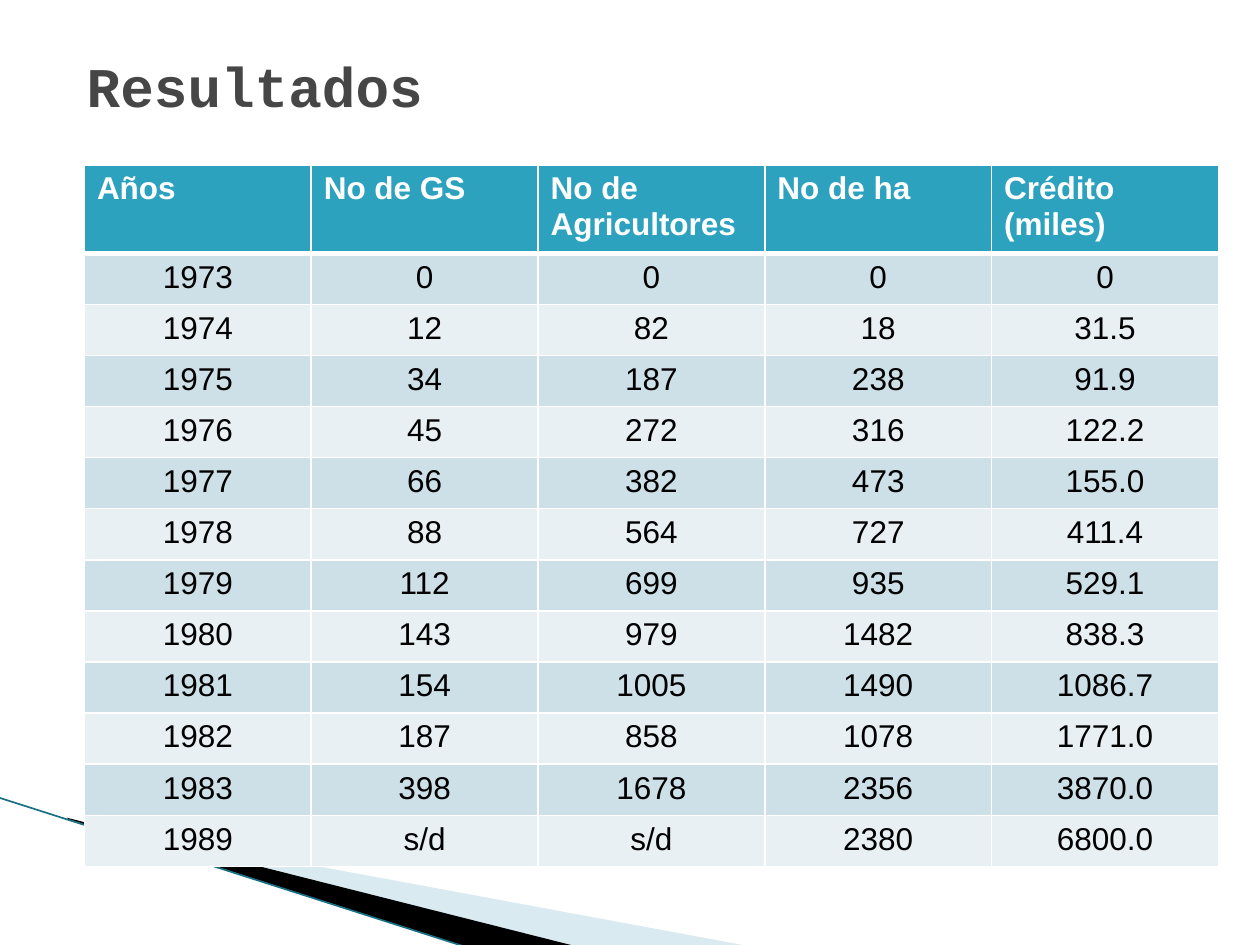
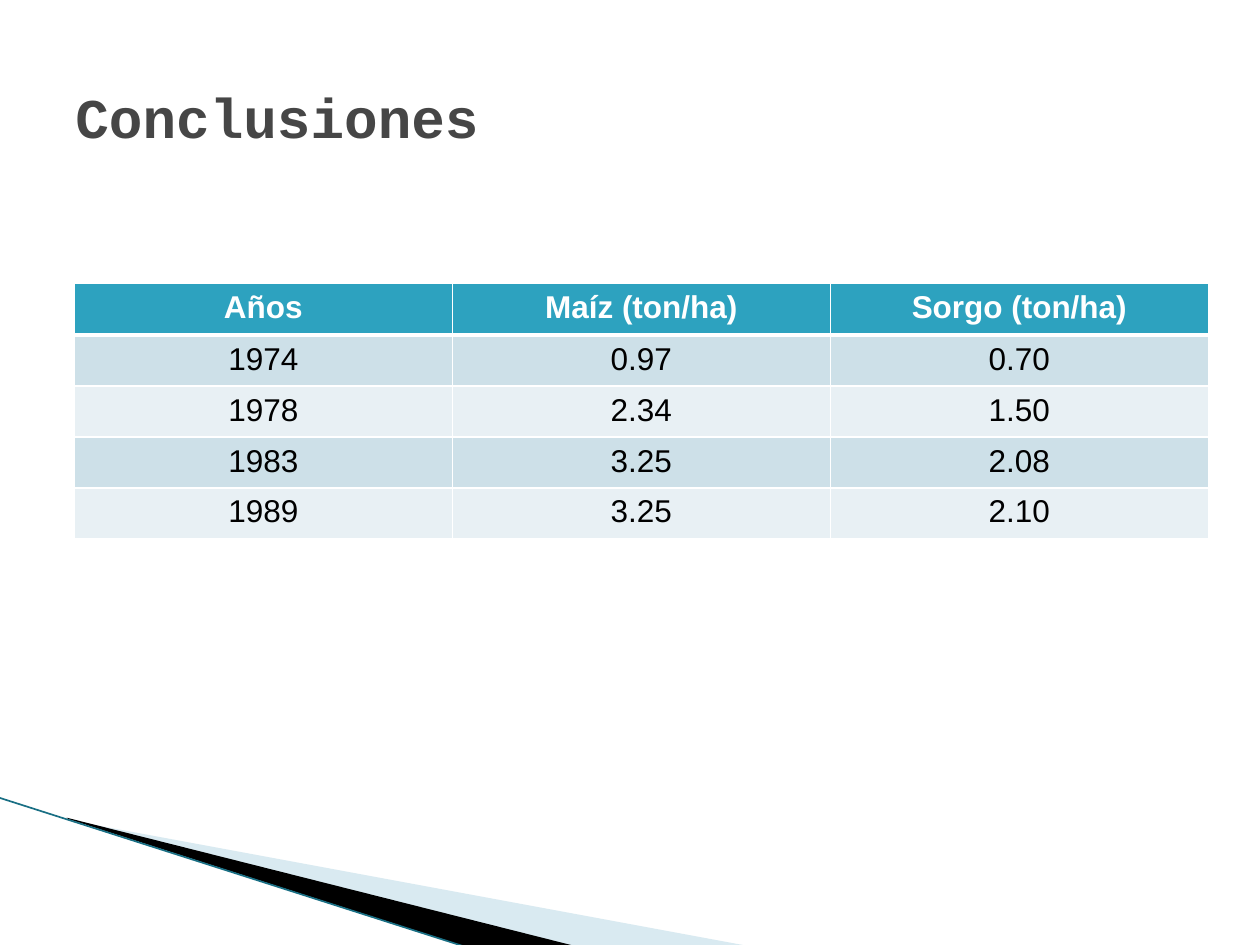
"""Builds two slides of results tables on a shared wedge design."""
from lxml import etree
from pptx import Presentation
from pptx.dml.color import RGBColor
from pptx.enum.text import MSO_ANCHOR, PP_ALIGN
from pptx.oxml import parse_xml
from pptx.oxml.ns import qn
from pptx.util import Pt

PX = 9144
NS = "http://schemas.openxmlformats.org/drawingml/2006/main"
COLORS = {
    "title": "464646", "header": "2DA2BF", "odd": "CDE0E8", "even": "E8F0F4",
    "white": "FFFFFF", "black": "000000", "pale": "A0CBDC", "edge": "196F84",
}
WEDGES = [
    ("pale", 40, [(55, 651), (595, 751), (456, 751), (55, 650)]),
    ("black", 100, [(53, 649), (457, 751), (372, 752), (54, 650)]),
]
EDGE = (-1, 633, 371, 752)
SLIDES = [
    {
        "title": "Resultados", "title_box": (59, 21, 900, 93),
        "table_box": (67, 131, 900, 557), "header_height": 70,
        "header_align": PP_ALIGN.LEFT,
        "rows": [
            ("Años", "No de GS", "No de Agricultores", "No de ha", "Crédito (miles)"),
            ("1973", "0", "0", "0", "0"),
            ("1974", "12", "82", "18", "31.5"),
            ("1975", "34", "187", "238", "91.9"),
            ("1976", "45", "272", "316", "122.2"),
            ("1977", "66", "382", "473", "155.0"),
            ("1978", "88", "564", "727", "411.4"),
            ("1979", "112", "699", "935", "529.1"),
            ("1980", "143", "979", "1482", "838.3"),
            ("1981", "154", "1005", "1490", "1086.7"),
            ("1982", "187", "858", "1078", "1771.0"),
            ("1983", "398", "1678", "2356", "3870.0"),
            ("1989", "s/d", "s/d", "2380", "6800.0"),
        ],
    },
    {
        "title": "Conclusiones", "title_box": (50, 30, 900, 125),
        "table_box": (59, 225, 900, 203), "header_height": 41,
        "header_align": PP_ALIGN.CENTER,
        "rows": [
            ("Años", "Maíz (ton/ha)", "Sorgo (ton/ha)"),
            ("1974", "0.97", "0.70"),
            ("1978", "2.34", "1.50"),
            ("1983", "3.25", "2.08"),
            ("1989", "3.25", "2.10"),
        ],
    },
]


def rgb(name):
    return RGBColor.from_string(COLORS[name])


def emu(values):
    return [round(v * PX) for v in values]


def write(tf, text, font="Arial", size=18, color="black", bold=False,
          align=PP_ALIGN.LEFT):
    p = tf.paragraphs[0]
    p.alignment = align
    r = p.add_run()
    r.text = text
    r.font.name, r.font.size, r.font.bold = font, Pt(size), bold
    r.font.color.rgb = rgb(color)


def add_wedges(s):
    for color, opacity, points in WEDGES:
        builder = s.shapes.build_freeform(*points[0], scale=PX)
        builder.add_line_segments(points[1:], close=True)
        sp = builder.convert_to_shape()
        sp.shadow.inherit = False
        sp.fill.solid()
        sp.fill.fore_color.rgb = rgb(color)
        sp.line.fill.background()
        if opacity < 100:
            clr = sp._element.spPr.find(qn("a:solidFill"))[0]
            etree.SubElement(clr, qn("a:alpha"), val=str(opacity * 1000))
    line = s.shapes.add_connector(1, *emu(EDGE))
    line.line.color.rgb = rgb("edge")
    line.line.width = Pt(0.95)
    etree.SubElement(line._element.spPr, qn("a:effectLst"))


def set_borders(cell, top, bottom):
    tc_pr = cell._tc.get_or_add_tcPr()
    widths = {"L": 1, "R": 1, "T": top, "B": bottom}
    for i, (side, width) in enumerate(widths.items()):
        tc_pr.insert(i, parse_xml(
            f'<a:ln{side} xmlns:a="{NS}" w="{Pt(width)}"><a:solidFill>'
            f'<a:srgbClr val="{COLORS["white"]}"/></a:solidFill></a:ln{side}>'))


def add_table(s, rows, box, header_height, header_align):
    n_rows, n_cols = len(rows), len(rows[0])
    table = s.shapes.add_table(n_rows, n_cols, *emu(box)).table
    body_height = (box[3] - header_height) / (n_rows - 1)
    for col in table.columns:
        col.width = round(box[2] * PX / n_cols)
    for i, values in enumerate(rows):
        header = i == 0
        table.rows[i].height = round((header_height if header else body_height) * PX)
        fill = "header" if header else "odd" if i % 2 else "even"
        for j, text in enumerate(values):
            cell = table.cell(i, j)
            cell.fill.solid()
            cell.fill.fore_color.rgb = rgb(fill)
            set_borders(cell, top=3 if i == 1 else 1, bottom=3 if header else 1)
            write(cell.text_frame, text, bold=header,
                  color="white" if header else "black",
                  align=header_align if header else PP_ALIGN.CENTER)


def add_title(s, text, box):
    tf = s.shapes.add_textbox(*emu(box)).text_frame
    tf.word_wrap = True
    tf.vertical_anchor = MSO_ANCHOR.MIDDLE
    write(tf, text, font="Courier New", size=32, color="title", bold=True)


def main():
    prs = Presentation()
    prs.slide_width, prs.slide_height = emu((1000, 750))
    for page in SLIDES:
        s = prs.slides.add_slide(prs.slide_layouts[6])
        add_wedges(s)
        add_table(s, page["rows"], page["table_box"], page["header_height"],
                  page["header_align"])
        add_title(s, page["title"], page["title_box"])
    prs.save("out.pptx")


if __name__ == "__main__":
    main()
